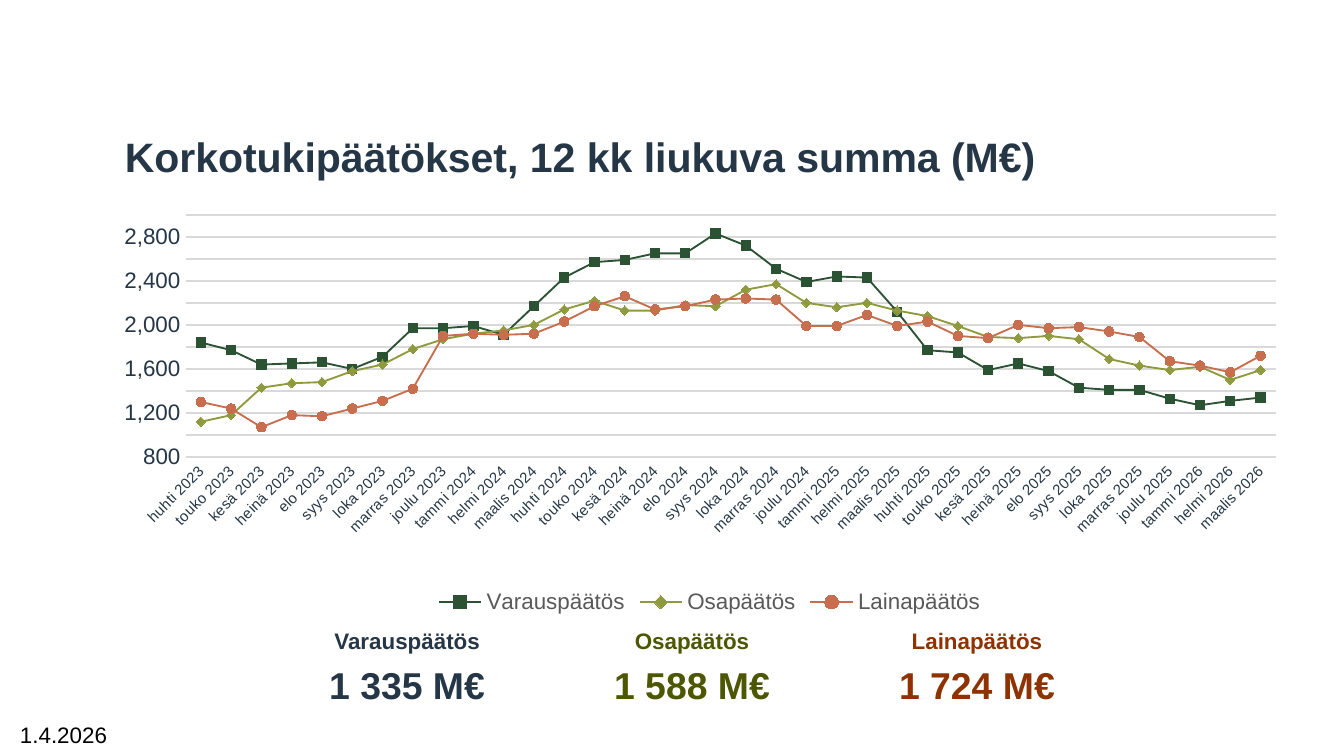
from lxml import etree
from pptx import Presentation
from pptx.chart.data import CategoryChartData
from pptx.dml.color import RGBColor
from pptx.enum.chart import XL_CHART_TYPE, XL_LEGEND_POSITION, XL_MARKER_STYLE, XL_TICK_MARK
from pptx.enum.text import MSO_ANCHOR, PP_ALIGN
from pptx.oxml.ns import qn
from pptx.util import Inches, Pt

COLORS = {
    "ink": "253746", "black": "000000", "legend": "595959", "grid": "D9D9D9",
    "green": "2C5234", "olive": "8F993E", "rust": "C66E4E",
    "dark_olive": "4C5700", "dark_rust": "8E3300", "white": "FFFFFF",
}
FONT = "Arial"
TITLE = "Korkotukipäätökset, 12 kk liukuva summa (M€)"
DATE = "1.4.2026"
MONTHS = ["tammi", "helmi", "maalis", "huhti", "touko", "kesä",
          "heinä", "elo", "syys", "loka", "marras", "joulu"]
FIRST_YEAR, FIRST_MONTH, MONTH_COUNT = 2023, 3, 36
SERIES = [
    ("Varauspäätös", "green", XL_MARKER_STYLE.SQUARE,
     [1840, 1770, 1640, 1650, 1660, 1600, 1710, 1970, 1970, 1990, 1910, 2170,
      2430, 2570, 2590, 2650, 2650, 2830, 2720, 2510, 2390, 2440, 2430, 2120,
      1770, 1750, 1590, 1650, 1580, 1430, 1410, 1410, 1330, 1270, 1310, 1340]),
    ("Osapäätös", "olive", XL_MARKER_STYLE.DIAMOND,
     [1120, 1180, 1430, 1470, 1480, 1580, 1640, 1780, 1870, 1920, 1950, 2000,
      2140, 2220, 2130, 2130, 2180, 2170, 2320, 2370, 2200, 2160, 2200, 2130,
      2080, 1990, 1890, 1880, 1900, 1870, 1690, 1630, 1590, 1620, 1500, 1590]),
    ("Lainapäätös", "rust", XL_MARKER_STYLE.CIRCLE,
     [1300, 1240, 1070, 1180, 1170, 1240, 1310, 1420, 1900, 1920, 1910, 1920,
      2030, 2170, 2260, 2140, 2170, 2230, 2240, 2230, 1990, 1990, 2090, 1990,
      2030, 1900, 1880, 2000, 1970, 1980, 1940, 1890, 1670, 1630, 1570, 1720]),
]
TOTALS = [
    ("Varauspäätös", "1 335 M€", "ink"),
    ("Osapäätös", "1 588 M€", "dark_olive"),
    ("Lainapäätös", "1 724 M€", "dark_rust"),
]
PLOT = {"x": 0.054, "y": 0.041, "w": 0.928, "h": 0.574}


def rgb(name):
    return RGBColor.from_string(COLORS[name])


def style_font(font, size, color, bold=False):
    font.name, font.size, font.bold = FONT, Pt(size), bold
    font.color.rgb = rgb(color)


def style_line(line, color, width):
    line.color.rgb = rgb(color)
    line.width = Pt(width)


def add_text(slide, box, lines, color, bold=False, align=PP_ALIGN.LEFT,
             anchor=MSO_ANCHOR.TOP, fill=None):
    sp = slide.shapes.add_textbox(*map(Inches, box))
    if fill:
        sp.fill.solid()
        sp.fill.fore_color.rgb = rgb(fill)
    tf = sp.text_frame
    tf.word_wrap = True
    tf.vertical_anchor = anchor
    for i, (text, size) in enumerate(lines):
        p = tf.add_paragraph() if i else tf.paragraphs[0]
        p.text = text
        p.alignment = align
        if i:
            p.space_before = Pt(size * 0.2)
        style_font(p.font, size, color, bold)


def set_plot_layout(chart):
    area = chart._chartSpace.chart.plotArea
    for old in area.findall(qn("c:layout")):
        area.remove(old)
    layout = etree.Element(qn("c:layout"))
    manual = etree.SubElement(layout, qn("c:manualLayout"))
    settings = [("layoutTarget", "inner"), ("xMode", "edge"), ("yMode", "edge")]
    for tag, value in settings + list(PLOT.items()):
        etree.SubElement(manual, qn("c:" + tag)).set("val", str(value))
    area.insert(0, layout)


def add_line_chart(slide):
    data = CategoryChartData(number_format="#,##0")
    months = range(FIRST_MONTH, FIRST_MONTH + MONTH_COUNT)
    data.categories = [f"{MONTHS[m % 12]} {FIRST_YEAR + m // 12}" for m in months]
    for name, _, _, values in SERIES:
        data.add_series(name, values)
    chart = slide.shapes.add_chart(
        XL_CHART_TYPE.LINE_MARKERS, Inches(0.91), Inches(1.47),
        Inches(8.74), Inches(3.14), data).chart
    chart.has_title = False
    style_font(chart.font, 10, "black")
    chart.plots[0].vary_by_categories = False
    for series, (_, color, marker, _) in zip(chart.plots[0].series, SERIES):
        series.smooth = False
        style_line(series.format.line, color, 1)
        series.marker.style, series.marker.size = marker, 5
        series.marker.format.fill.solid()
        series.marker.format.fill.fore_color.rgb = rgb(color)
        style_line(series.marker.format.line, color, 0.75)

    months_axis, value_axis = chart.category_axis, chart.value_axis
    for axis, size in ((months_axis, 8), (value_axis, 12)):
        axis.major_tick_mark = axis.minor_tick_mark = XL_TICK_MARK.NONE
        style_font(axis.tick_labels.font, size, "ink")
    style_line(months_axis.format.line, "grid", 0.75)
    months_axis._element.find(qn("c:txPr")).find(qn("a:bodyPr")).set("rot", "-2700000")
    value_axis.minimum_scale, value_axis.maximum_scale = 800, 3000
    value_axis.major_unit = 200
    value_axis.format.line.fill.background()
    style_line(value_axis.major_gridlines.format.line, "grid", 0.75)
    value_axis.tick_labels.number_format = "#,##0"
    value_axis.tick_labels.number_format_is_linked = False

    chart.has_legend = True
    chart.legend.position = XL_LEGEND_POSITION.BOTTOM
    chart.legend.include_in_layout = False
    style_font(chart.legend.font, 12, "legend")
    set_plot_layout(chart)


def main():
    prs = Presentation()
    prs.slide_width = Inches(10)
    prs.slide_height = prs.slide_width * 9 // 16
    slide = prs.slides.add_slide(prs.slide_layouts[6])
    add_text(slide, (0.83, 0.97, 8.82, 0.38), [(TITLE, 22)], "ink", True,
             anchor=MSO_ANCHOR.MIDDLE)
    add_line_chart(slide)
    for i, (label, total, color) in enumerate(TOTALS):
        add_text(slide, (2 + i * 2.12, 4.62, 2.06, 0.94),
                 [(label, 12), (total, 20)], color, True, PP_ALIGN.CENTER,
                 fill="white" if i else None)
    add_text(slide, (0.05, 5.32, 1.75, 0.25), [(DATE, 12)], "black")
    prs.save("out.pptx")


if __name__ == "__main__":
    main()
